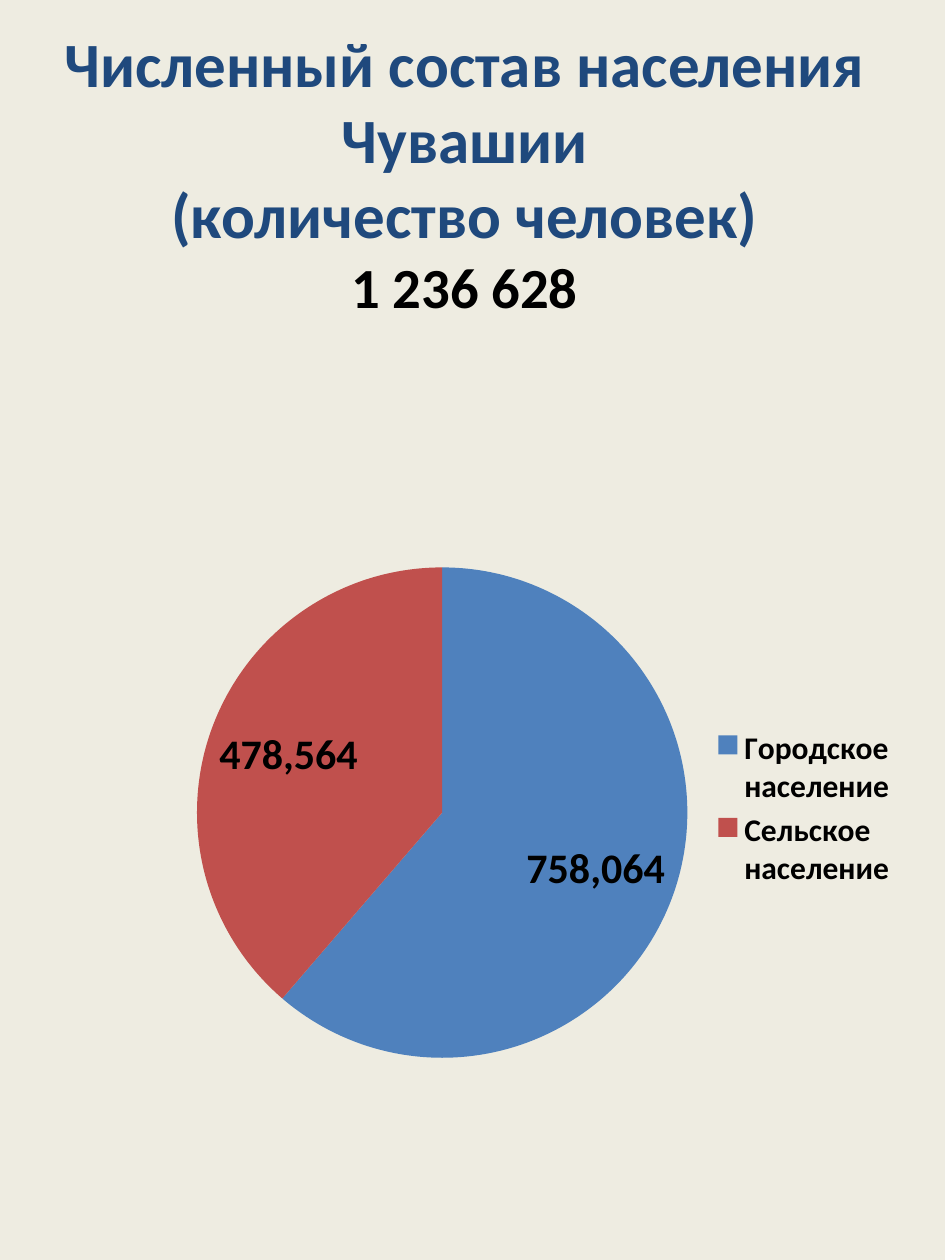
import pptx
import pptx.util
import pptx.chart.data
import pptx.dml.color
import pptx.enum.chart
import pptx.enum.text
import pptx.oxml
import pptx.oxml.ns
from dataclasses import dataclass

Pt = pptx.util.Pt
Color = pptx.dml.color.RGBColor.from_string


@dataclass(frozen=True)
class Theme:
    face: str = "Calibri"
    back: str = "EEECE1"
    head: str = "1F497D"
    ink: str = "000000"
    slices: tuple = ("4F81BD", "C0504D")
    title: float = 36
    total: float = 32.4
    label: float = 24
    legend: float = 18
    base: float = 10


THEME = Theme()


def style(font, size, color, bold=True):
    font.name = THEME.face
    font.size = Pt(size)
    font.bold = bold
    font.color.rgb = Color(color)


def add_title(slide, box):
    shape = slide.shapes.title
    shape.left, shape.top, shape.width, shape.height = map(Pt, box)
    frame = shape.text_frame
    frame.word_wrap = True
    frame.auto_size = pptx.enum.text.MSO_AUTO_SIZE.NONE
    frame.vertical_anchor = pptx.enum.text.MSO_ANCHOR.MIDDLE
    frame.margin_bottom = Pt(box[3] * 0.7)
    para = frame.paragraphs[0]
    para.alignment = pptx.enum.text.PP_ALIGN.CENTER
    lines = (
        ("Численный состав населения Чувашии", THEME.title, THEME.head),
        ("(количество человек)", THEME.title, THEME.head),
        ("1 236\u00a0628", THEME.total, THEME.ink),
    )
    for i, (text, size, color) in enumerate(lines):
        if i:
            para.add_line_break()
        run = para.add_run()
        run.text = text
        style(run.font, size, color)


def place_plot(chart, left, top, width, height):
    plot = chart.plots[0]
    area = plot._element.getparent()
    for old in area.findall(pptx.oxml.ns.qn("c:layout")):
        area.remove(old)
    sizes = {"x": left, "y": top, "w": width, "h": height}
    parts = "".join(f'<c:{key} val="{val}"/>' for key, val in sizes.items())
    area.insert(0, pptx.oxml.parse_xml(
        f'<c:layout {pptx.oxml.ns.nsdecls("c")}><c:manualLayout>'
        '<c:layoutTarget val="inner"/><c:xMode val="edge"/><c:yMode val="edge"/>'
        f'{parts}</c:manualLayout></c:layout>'))


def add_pie(slide, box):
    data = pptx.chart.data.CategoryChartData(number_format="#,##0")
    data.categories = ["Городское население", "Сельское население"]
    data.add_series("Series 1", (758064, 478564))
    kind = pptx.enum.chart.XL_CHART_TYPE.PIE
    chart = slide.shapes.add_chart(kind, *map(Pt, box), data).chart
    style(chart.font, THEME.base, THEME.ink, False)
    chart.has_title = False

    chart.has_legend = True
    chart.legend.position = pptx.enum.chart.XL_LEGEND_POSITION.RIGHT
    chart.legend.include_in_layout = False
    style(chart.legend.font, THEME.legend, THEME.ink)

    plot = chart.plots[0]
    plot.vary_by_categories = True
    for i, color in enumerate(THEME.slices):
        fill = plot.series[0].points[i].format.fill
        fill.solid()
        fill.fore_color.rgb = Color(color)

    labels = plot.series[0].data_labels
    labels.show_value = True
    labels.number_format = "#,##0"
    labels.number_format_is_linked = False
    labels.position = pptx.enum.chart.XL_LABEL_POSITION.INSIDE_END
    style(labels.font, THEME.label, THEME.ink)
    place_plot(chart, 0.16, 0.21, 0.58, 0.59)


def main():
    deck = pptx.Presentation()
    deck.slide_width, deck.slide_height = Pt(540), Pt(720)
    slide = deck.slides.add_slide(deck.slide_layouts.get_by_name("Title Only"))
    fill = slide.background.fill
    fill.solid()
    fill.fore_color.rgb = Color(THEME.back)
    add_title(slide, (22.5, 78.5, 486, 120))
    add_pie(slide, (34, 224.5, 486, 475))
    deck.save("out.pptx")


if __name__ == "__main__":
    main()
